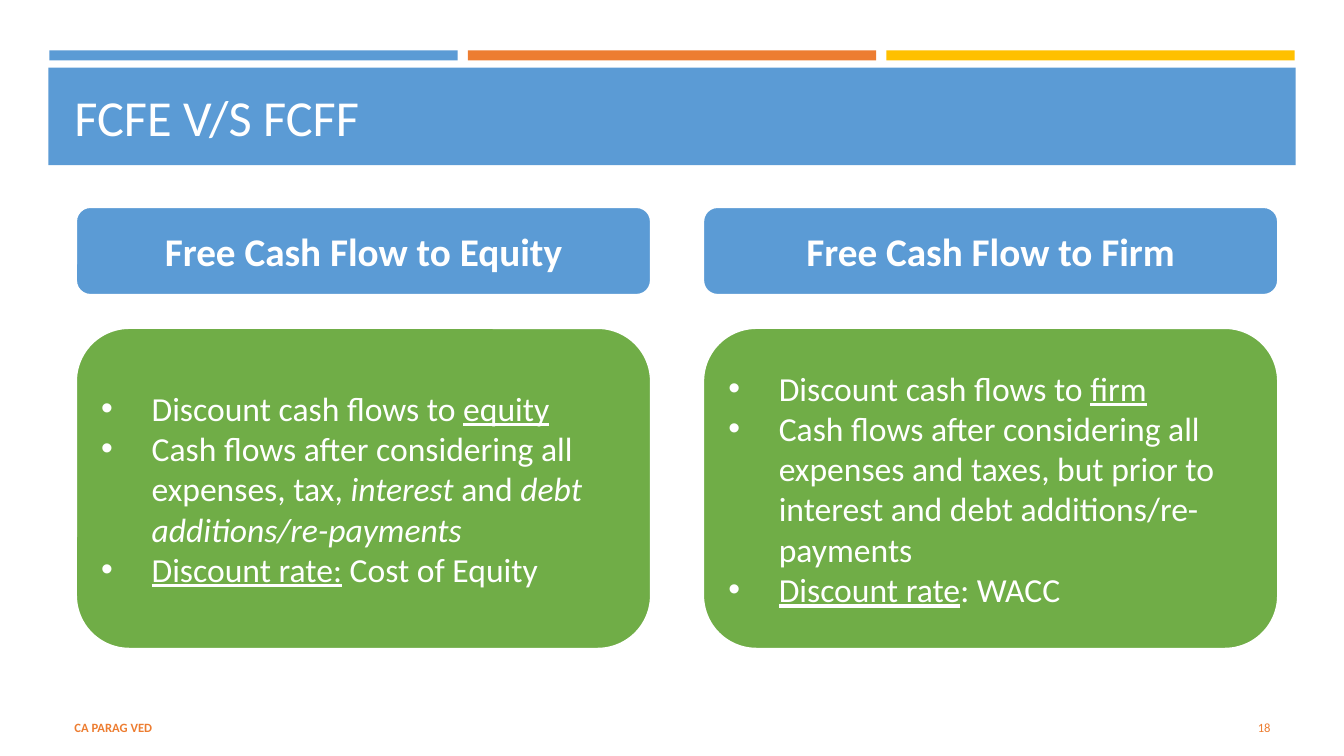
from lxml import etree
from pptx import Presentation
from pptx.dml.color import RGBColor
from pptx.enum.shapes import MSO_SHAPE
from pptx.enum.text import MSO_ANCHOR, PP_ALIGN
from pptx.oxml.ns import qn
from pptx.util import Inches, Pt

RECTANGLE, ROUNDED = MSO_SHAPE.RECTANGLE, MSO_SHAPE.ROUNDED_RECTANGLE
LEFT, CENTER, RIGHT = PP_ALIGN.LEFT, PP_ALIGN.CENTER, PP_ALIGN.RIGHT
MIDDLE = MSO_ANCHOR.MIDDLE
BLANK_LAYOUT = 6
BLUE, ORANGE, YELLOW, GREEN, WHITE = "5B9BD5", "ED7D31", "FFC000", "70AD47", "FFFFFF"
UNDERLINE, ITALIC = {"underline": True}, {"italic": True}

COLUMNS = [
    ("Free Cash Flow to Equity", [
        [("Discount cash flows to ", {}), ("equity", UNDERLINE)],
        [("Cash flows after considering all expenses, tax, ", {}), ("interest", ITALIC),
         (" and ", {}), ("debt additions/re-payments", ITALIC)],
        [("Discount rate:", UNDERLINE), (" Cost of Equity", {})],
    ]),
    ("Free Cash Flow to Firm", [
        [("Discount cash flows to ", {}), ("firm", UNDERLINE)],
        [("Cash flows after considering all expenses and taxes, but prior to "
          "interest and debt additions/re-payments", {})],
        [("Discount rate", UNDERLINE), (": WACC", {})],
    ]),
]


def color(value):
    return RGBColor.from_string(value)


class SlideBuilder:
    """Holds the text style and the current slide, and adds elements to it."""

    def __init__(self, slide, font_name):
        self.slide = slide
        self.font_name = font_name

    def add_text(self, shape, paragraphs, size, text_color, align=LEFT, bold=False, bullet=False):
        frame = shape.text_frame
        frame.word_wrap = True
        frame.vertical_anchor = MIDDLE
        for index, runs in enumerate(paragraphs):
            paragraph = frame.add_paragraph() if index else frame.paragraphs[0]
            paragraph.alignment = align
            if bullet:
                self.add_bullet(paragraph)
            for text, extra in runs:
                run = paragraph.add_run()
                run.text = text
                run.font.color.rgb = color(text_color)
                style = {"name": self.font_name, "size": Pt(size), "bold": bold, **extra}
                for name, value in style.items():
                    setattr(run.font, name, value)

    def add_bullet(self, paragraph):
        properties = paragraph._p.get_or_add_pPr()
        properties.set("marL", str(Inches(0.5)))
        properties.set("indent", str(Inches(-0.5)))
        etree.SubElement(properties, qn("a:buFont")).set("typeface", "Arial")
        etree.SubElement(properties, qn("a:buChar")).set("char", "•")

    def add_block(self, kind, box, fill, outline=None):
        shape = self.slide.shapes.add_shape(kind, *map(Inches, box))
        shape.shadow.inherit = False
        shape.fill.solid()
        shape.fill.fore_color.rgb = color(fill)
        if outline:
            shape.line.color.rgb = color(outline)
            shape.line.width = Pt(2)
        else:
            shape.line.fill.background()
        return shape

    def add_label(self, box, text, size, text_color, **options):
        shape = self.slide.shapes.add_textbox(*map(Inches, box))
        self.add_text(shape, [[(text, {})]], size, text_color, **options)

    def add_column(self, left, heading, points):
        card = self.add_block(ROUNDED, (left, 3.25, 5.71, 3.19), GREEN, WHITE)
        self.add_text(card, points, 24, WHITE, bullet=True)
        header = self.add_block(ROUNDED, (left, 2.05, 5.71, 0.88), BLUE, WHITE)
        self.add_text(header, [[(heading, {})]], 28, WHITE, align=CENTER, bold=True)


def main():
    presentation = Presentation()
    presentation.slide_width = Inches(13.33)
    presentation.slide_height = Inches(7.5)
    slide = presentation.slides.add_slide(presentation.slide_layouts[BLANK_LAYOUT])
    builder = SlideBuilder(slide, "Calibri")

    for index, fill in enumerate([BLUE, ORANGE, YELLOW]):
        builder.add_block(RECTANGLE, (0.49 + 4.15 * index, 0.5, 4.05, 0.1), fill)
    builder.add_block(RECTANGLE, (0.48, 0.67, 12.37, 0.97), BLUE)
    builder.add_label((0.64, 0.74, 12.06, 0.83), "FCFE V/S FCFF", 36, WHITE)

    for index, (heading, points) in enumerate(COLUMNS):
        builder.add_column(0.75 + 6.22 * index, heading, points)

    builder.add_label((11.55, 7.02, 1.15, 0.4), "18", 9, ORANGE, align=RIGHT)
    builder.add_label((0.64, 7.02, 7.56, 0.4), "CA PARAG VED", 9, ORANGE, bold=True)
    presentation.save("out.pptx")


if __name__ == "__main__":
    main()
